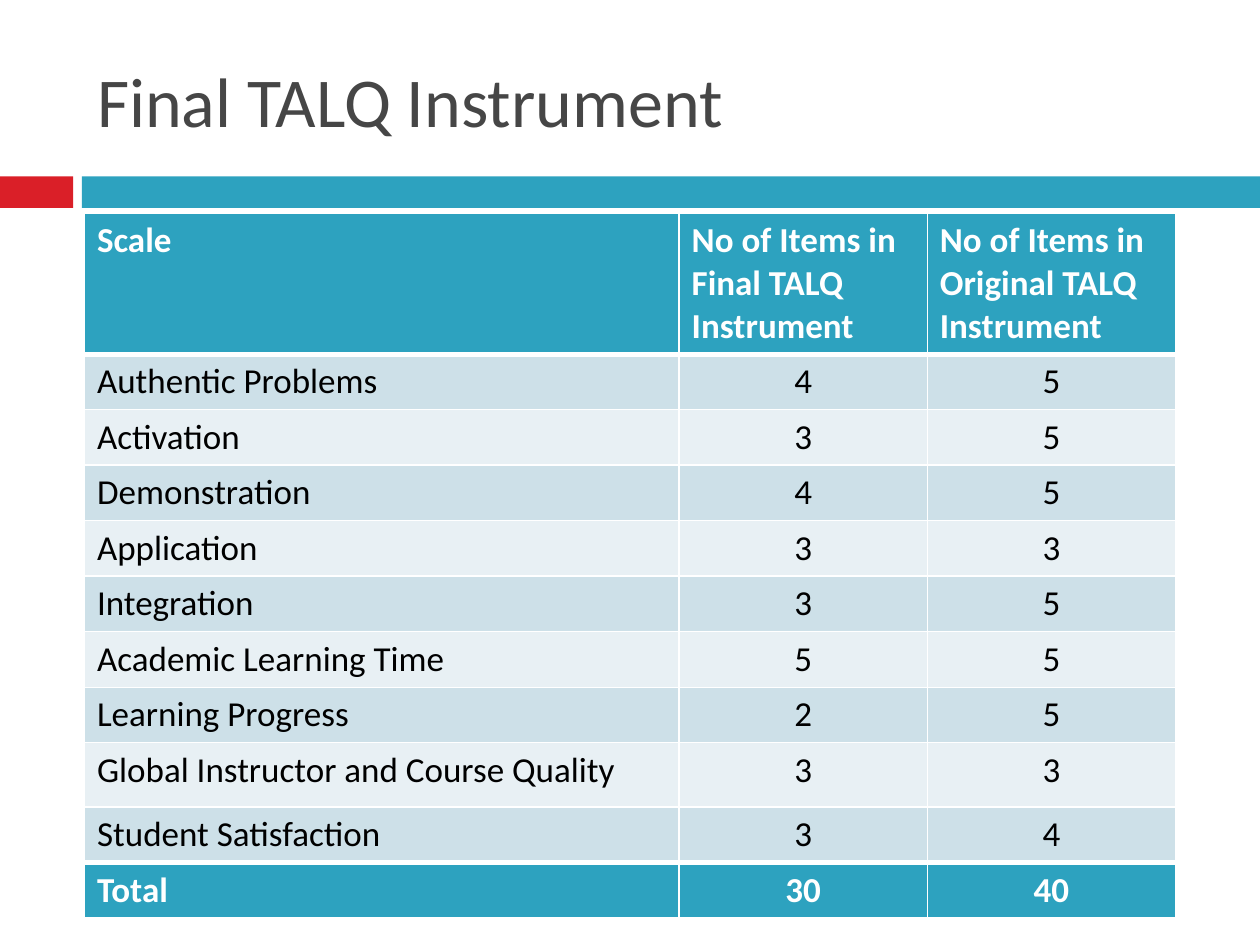
from typing import NamedTuple

from lxml import etree
from pptx import Presentation
from pptx import util as u
from pptx.dml.color import RGBColor
from pptx.enum import shapes, text
from pptx.oxml import ns

FONT = "Calibri"
RED, TEAL, GREY = "DA1F28", "2DA2BF", "464646"
WHITE, BLACK = "FFFFFF", "000000"
BANDS = ("CDE0E8", "E8F0F4")
COLUMN_WIDTHS = (4.72, 1.97, 1.97)
HEADER_HEIGHT, ROW_HEIGHT, TALL_HEIGHT = 1.11, 0.44, 0.51
THIN, THICK = 1, 3


class Bar(NamedTuple):
    left: float
    width: float
    color: str


class Scale(NamedTuple):
    name: str
    final: str
    original: str
    height: float = ROW_HEIGHT


BARS = (Bar(0, 0.58, RED), Bar(0.65, 9.35, TEAL))

ROWS = (
    Scale("Scale", "No of Items in Final TALQ Instrument",
          "No of Items in Original TALQ Instrument", HEADER_HEIGHT),
    Scale("Authentic Problems", "4", "5"),
    Scale("Activation", "3", "5"),
    Scale("Demonstration", "4", "5"),
    Scale("Application", "3", "3"),
    Scale("Integration", "3", "5"),
    Scale("Academic Learning Time", "5", "5"),
    Scale("Learning Progress", "2", "5"),
    Scale("Global Instructor and Course Quality", "3", "3", TALL_HEIGHT),
    Scale("Student Satisfaction", "3", "4"),
    Scale("Total", "30", "40"),
)


def paint(fill, color: str) -> None:
    fill.solid()
    fill.fore_color.rgb = RGBColor.from_string(color)


def style_font(font, size: float, color: str, bold: bool = False) -> None:
    font.name = FONT
    font.size = u.Pt(size)
    font.bold = bold
    font.color.rgb = RGBColor.from_string(color)


def draw_bar(page, bar: Bar) -> None:
    box = page.shapes.add_shape(
        shapes.MSO_SHAPE.RECTANGLE, u.Inches(bar.left), u.Inches(1.4),
        u.Inches(bar.width), u.Inches(0.25))
    box.shadow.inherit = False
    paint(box.fill, bar.color)
    box.line.fill.background()


def draw_title(page, title: str) -> None:
    box = page.shapes.title
    box.left, box.top = u.Inches(0.67), u.Inches(0.25)
    box.width, box.height = u.Inches(8.92), u.Inches(1.08)
    frame = box.text_frame
    frame.text = title
    frame.word_wrap = True
    frame.vertical_anchor = text.MSO_ANCHOR.MIDDLE
    para = frame.paragraphs[0]
    para.alignment = text.PP_ALIGN.LEFT
    style_font(para.runs[0].font, 40, GREY)


def add_borders(cell, top: float, bottom: float) -> None:
    """Give the cell white borders; call before setting its fill."""
    properties = cell._tc.get_or_add_tcPr()
    widths = {"a:lnL": THIN, "a:lnR": THIN, "a:lnT": top, "a:lnB": bottom}
    for tag, width in widths.items():
        line = etree.SubElement(properties, ns.qn(tag), w=str(u.Pt(width)))
        fill = etree.SubElement(line, ns.qn("a:solidFill"))
        etree.SubElement(fill, ns.qn("a:srgbClr"), val=WHITE)


def draw_table(page, rows: tuple[Scale, ...]) -> None:
    frame = page.shapes.add_table(
        len(rows), len(COLUMN_WIDTHS), u.Inches(0.67), u.Inches(1.69),
        u.Inches(sum(COLUMN_WIDTHS)), u.Inches(sum(row.height for row in rows)))
    table = frame.table
    for column, width in zip(table.columns, COLUMN_WIDTHS):
        column.width = u.Inches(width)

    last = len(rows) - 1
    for i, row in enumerate(rows):
        table.rows[i].height = u.Inches(row.height)
        strong = i in (0, last)
        top = THICK if i in (1, last) else THIN
        bottom = THICK if i in (0, last - 1) else THIN
        for j, value in enumerate((row.name, row.final, row.original)):
            cell = table.cell(i, j)
            add_borders(cell, top, bottom)
            paint(cell.fill, TEAL if strong else BANDS[(i - 1) % 2])
            cell.text = value
            para = cell.text_frame.paragraphs[0]
            if i and j:
                para.alignment = text.PP_ALIGN.CENTER
            style_font(para.runs[0].font, 20, WHITE if strong else BLACK, strong)


def main() -> None:
    deck = Presentation()
    deck.slide_width, deck.slide_height = u.Inches(10), u.Inches(7.5)
    page = deck.slides.add_slide(deck.slide_layouts[5])
    paint(page.background.fill, WHITE)
    for bar in BARS:
        draw_bar(page, bar)
    draw_title(page, "Final TALQ Instrument")
    draw_table(page, ROWS)
    deck.save("out.pptx")


if __name__ == "__main__":
    main()
